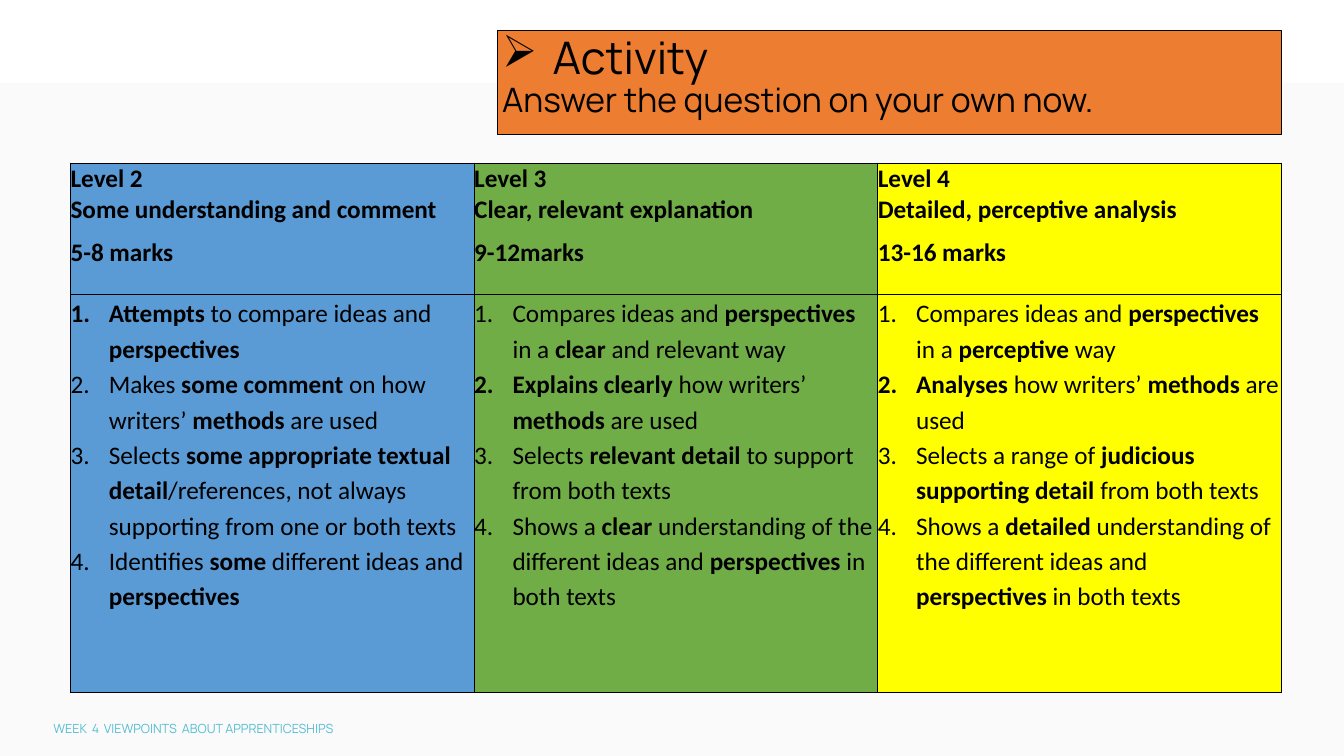
import pptx
import pptx.dml.color
import pptx.enum.shapes
import pptx.enum.text
import pptx.oxml
import pptx.oxml.ns
import pptx.util
from lxml import etree

RGBColor = pptx.dml.color.RGBColor
BLACK = RGBColor(0x00, 0x00, 0x00)
PALE_GREY = RGBColor(0xFA, 0xFA, 0xFA)
ORANGE = RGBColor(0xED, 0x7D, 0x31)
TURQUOISE = RGBColor(0x57, 0xBE, 0xD3)
BLUE = RGBColor(0x5B, 0x9B, 0xD5)
GREEN = RGBColor(0x70, 0xAD, 0x47)
YELLOW = RGBColor(0xFF, 0xFF, 0x00)

HEADING = "Activity"
INSTRUCTION = "Answer the question on your own now."
FOOTER = "WEEK  4\tVIEWPOINTS  ABOUT APPRENTICESHIPS"

# Double asterisks switch bold on and off.
LEVELS = [
    (BLUE, ["Level 2", "Some understanding and comment", "5-8 marks"], [
        "**Attempts** to compare ideas and **perspectives**",
        "Makes **some comment **on how writers’ **methods** are used",
        "Selects **some appropriate textual detail**/references, not always "
        "supporting from one or both texts",
        "Identifies **some** different ideas and **perspectives**",
    ]),
    (GREEN, ["Level 3", "Clear, relevant explanation", "9-12marks"], [
        "Compares ideas and **perspectives** in a **clear** and relevant way",
        "**Explains clearly **how writers’ **methods** are used",
        "Selects **relevant detail **to support from both texts",
        "Shows a **clear** understanding of the different ideas and "
        "**perspectives** in both texts",
    ]),
    (YELLOW, ["Level 4", "Detailed, perceptive analysis", "13-16 marks"], [
        "Compares ideas and **perspectives** in a **perceptive** way",
        "**Analyses** how writers’ **methods** are used",
        "Selects a range of **judicious supporting detail **from both texts",
        "Shows a **detailed** understanding of the different ideas and "
        "**perspectives** in both texts",
    ]),
]

inches = pptx.util.Inches
SLIDE_WIDTH, SLIDE_HEIGHT = inches(13.33), inches(7.5)
LEFT, RIGHT = inches(0.7), inches(12.71)
HEADING_LEFT = inches(4.93)
BAND_TOP = inches(0.82)
ROW_HEIGHTS = [inches(1.3), inches(3.95)]


def add_child(parent, tag, **attributes):
    child = etree.SubElement(parent, pptx.oxml.ns.qn(tag))
    for name, value in attributes.items():
        child.set(name, str(value))
    return child


def write(frame, text, *, size, font, color=BLACK, bold=False, first=False,
          spacing=1.0, before=0, hang=0, bullet=None, tab=None):
    """Add one paragraph; a first paragraph fills the one already there."""
    paragraph = frame.paragraphs[0] if first else frame.add_paragraph()
    paragraph.alignment = pptx.enum.text.PP_ALIGN.LEFT
    paragraph.line_spacing = spacing
    paragraph.space_before = pptx.util.Pt(before)
    properties = paragraph._p.get_or_add_pPr()
    if bullet:
        properties.set("marL", str(inches(hang)))
        properties.set("indent", str(-inches(hang)))
        if bullet == "1.":
            add_child(properties, "a:buAutoNum", type="arabicPeriod")
        else:
            add_child(properties, "a:buChar", char=bullet)
    if tab:
        stops = add_child(properties, "a:tabLst")
        add_child(stops, "a:tab", pos=inches(tab), algn="l")
    for index, part in enumerate(text.split("**")):
        if part:
            run = paragraph.add_run()
            run.text = part
            run.font.name = font
            run.font.size = pptx.util.Pt(size)
            run.font.bold = bold or index % 2 == 1
            run.font.color.rgb = color


def set_margins(box, margin):
    box.margin_left = box.margin_right = margin
    box.margin_top = box.margin_bottom = margin


def format_cell(cell, color):
    set_margins(cell, 0)
    properties = cell._tc.get_or_add_tcPr()
    for side in ("a:lnL", "a:lnR", "a:lnT", "a:lnB"):
        border = add_child(properties, side, w=pptx.util.Pt(1))
        fill = add_child(border, "a:solidFill")
        add_child(fill, "a:srgbClr", val=BLACK)
    cell.fill.solid()
    cell.fill.fore_color.rgb = color


def add_band(slide):
    band = slide.shapes.add_shape(
        pptx.enum.shapes.MSO_SHAPE.RECTANGLE,
        0, BAND_TOP, SLIDE_WIDTH, SLIDE_HEIGHT - BAND_TOP)
    band.shadow.inherit = False
    band.fill.solid()
    band.fill.fore_color.rgb = PALE_GREY
    band.line.fill.background()


def add_footer(slide):
    footer = slide.shapes.add_textbox(
        inches(0.53), inches(7.15), inches(3.94), inches(0.14)).text_frame
    footer.word_wrap = True
    set_margins(footer, 0)
    write(footer, FOOTER, size=9, font="Manrope", color=TURQUOISE,
          first=True, tab=0.5)


def add_levels(slide):
    table = slide.shapes.add_table(
        len(ROW_HEIGHTS), len(LEVELS), LEFT, inches(1.62),
        RIGHT - LEFT, sum(ROW_HEIGHTS)).table
    table.first_row = table.horz_banding = False
    for row, height in zip(table.rows, ROW_HEIGHTS):
        row.height = height
    for column, (color, header, criteria) in enumerate(LEVELS):
        header_cell, criteria_cell = table.cell(0, column), table.cell(1, column)
        format_cell(header_cell, color)
        format_cell(criteria_cell, color)
        for index, line in enumerate(header):
            marks = index == len(header) - 1
            write(header_cell.text_frame, line, size=18, font="Calibri",
                  bold=True, first=index == 0,
                  spacing=1.15 if marks else 1.0, before=6 if marks else 0)
        for index, criterion in enumerate(criteria):
            write(criteria_cell.text_frame, criterion, size=18, font="Calibri",
                  first=index == 0, spacing=1.15, hang=0.38, bullet="1.")


def format_heading(slide):
    heading = slide.shapes.title
    slide.shapes._spTree.append(heading._element)  # in front of the band
    heading.left, heading.top = HEADING_LEFT, inches(0.3)
    heading.width, heading.height = RIGHT - HEADING_LEFT, inches(1.03)
    heading.fill.solid()
    heading.fill.fore_color.rgb = ORANGE
    heading.line.color.rgb = BLACK
    heading.line.width = pptx.util.Pt(0.75)
    frame = heading.text_frame
    frame.word_wrap = True
    frame.auto_size = pptx.enum.text.MSO_AUTO_SIZE.NONE
    frame.vertical_anchor = pptx.enum.text.MSO_ANCHOR.TOP
    set_margins(frame, inches(0.05))
    write(frame, HEADING, size=32, font="Manrope", first=True,
          spacing=0.9, hang=0.5, bullet="➢")
    write(frame, INSTRUCTION, size=24, font="Manrope", spacing=0.9)


def main():
    deck = pptx.Presentation()
    deck.slide_width, deck.slide_height = SLIDE_WIDTH, SLIDE_HEIGHT
    slide = deck.slides.add_slide(deck.slide_layouts.get_by_name("Title Only"))
    add_band(slide)
    add_footer(slide)
    add_levels(slide)
    format_heading(slide)
    deck.save("out.pptx")


if __name__ == "__main__":
    main()
